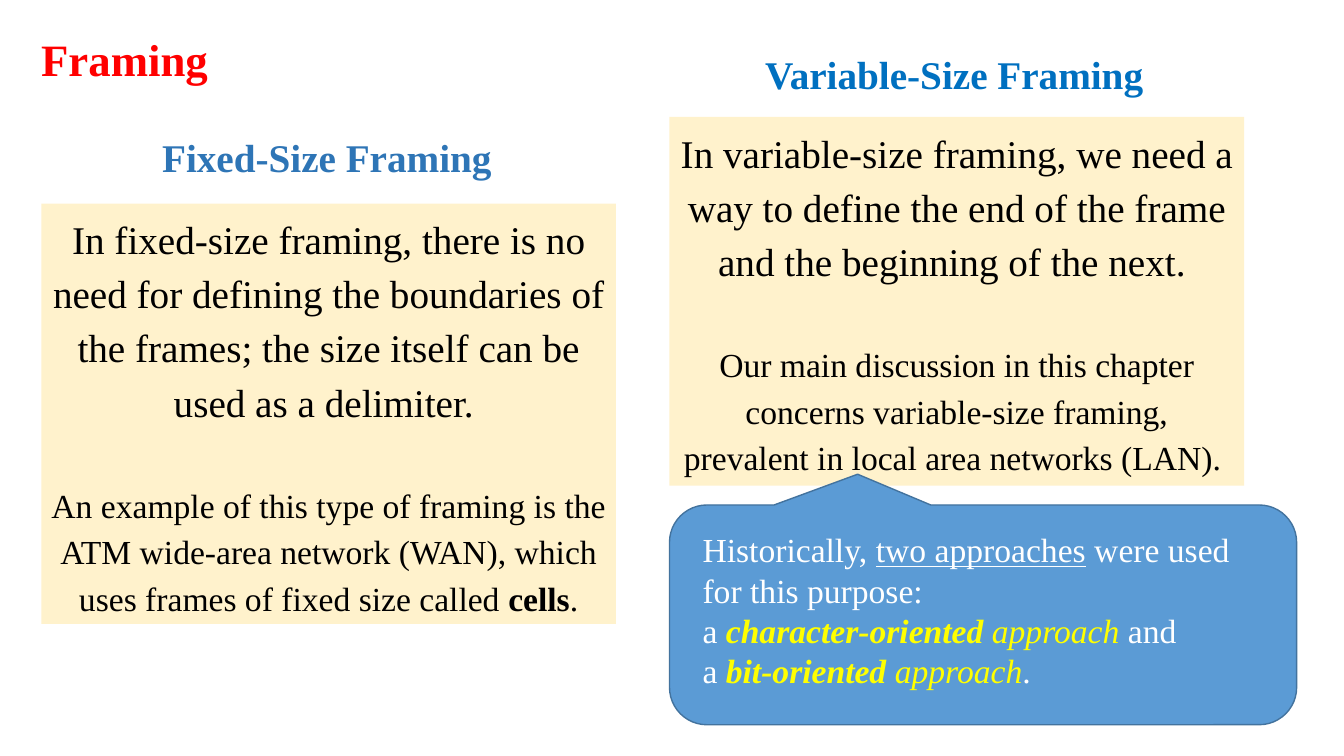
from pptx import Presentation
from pptx.dml.color import RGBColor
from pptx.enum.shapes import MSO_SHAPE as Shape
from pptx.enum.text import MSO_ANCHOR as Anchor, MSO_AUTO_SIZE as AutoSize, PP_ALIGN as Align
from pptx.util import Inches, Pt

FONT = "Times New Roman"
BLACK, WHITE, YELLOW = "000000", "FFFFFF", "FFFF00"
CREAM, CALLOUT_BLUE, CALLOUT_EDGE = "FFF2CC", "5B9BD5", "43739E"
PANEL_WIDTH = 5.7


def rgb(hex_code):
    return RGBColor.from_string(hex_code)


def apply(target, formats):
    for name, value in formats.items():
        setattr(target, name, value)


def write(frame, paragraphs, size, color, wrap=True):
    """Each paragraph is (paragraph formats, [(words, font formats), ...])."""
    apply(frame, {"word_wrap": wrap, "auto_size": AutoSize.SHAPE_TO_FIT_TEXT,
                  "vertical_anchor": Anchor.TOP})
    for index, (layout, runs) in enumerate(paragraphs):
        paragraph = frame.paragraphs[0] if index == 0 else frame.add_paragraph()
        apply(paragraph, {"alignment": Align.LEFT, **layout})
        for words, formats in runs:
            run = paragraph.add_run()
            run.text = words
            style = {"name": FONT, "size": Pt(size), **formats}
            run.font.color.rgb = rgb(style.pop("color", color))
            apply(run.font, style)


def add_text(slide, box, paragraphs, size, color, wrap=True):
    label = slide.shapes.add_textbox(*map(Inches, box))
    write(label.text_frame, paragraphs, size, color, wrap)


def add_heading(slide, box, words, size, color, wrap=False, **layout):
    add_text(slide, box, [(layout, [(words, {"bold": True})])], size, color, wrap)


def add_block(slide, kind, box, fill, line=None):
    block = slide.shapes.add_shape(kind, *map(Inches, box))
    block.shadow.inherit = False
    block.fill.solid()
    block.fill.fore_color.rgb = rgb(fill)
    if line:
        block.line.color.rgb = rgb(line)
        block.line.width = Pt(1)
    else:
        block.line.fill.background()
    return block


def add_panel(slide, left, top, height, statement, remark):
    """Cream panel: a large statement, then a smaller remark after a gap."""
    panel = add_block(slide, Shape.RECTANGLE, (left, top, PANEL_WIDTH, height), CREAM)
    layout = {"alignment": Align.CENTER, "line_spacing": 1.15}
    small_runs = [(words, {"size": Pt(24), **formats}) for words, formats in remark]
    write(panel.text_frame, [
        (layout, [(statement, {})]),
        ({**layout, "space_before": Pt(38.6)}, small_runs),
    ], 28, BLACK)


def add_callout(slide):
    callout = add_block(slide, Shape.ROUNDED_RECTANGULAR_CALLOUT,
                        (6.64, 5.01, 6.22, 2.18), CALLOUT_BLUE, CALLOUT_EDGE)
    for index, value in enumerate((-0.2, -0.64, 0.17)):
        callout.adjustments[index] = value

    accent = {"color": YELLOW, "italic": True}
    intro = [("Historically, ", {}), ("two approaches", {"underline": True}),
             (" were used for this purpose:", {})]
    approaches = [
        [("a ", {}), (kind, {**accent, "bold": True}), (" approach" + gap, accent), (ending, {})]
        for kind, gap, ending in (("character-oriented", " ", "and"), ("bit-oriented", "", "."))
    ]
    add_text(slide, (6.87, 5.2, PANEL_WIDTH, 1.72),
             [({}, runs) for runs in (intro, *approaches)], 24, WHITE)


def main():
    deck = Presentation()
    deck.slide_width, deck.slide_height = Inches(13.33), Inches(7.5)
    slide = deck.slides.add_slide(deck.slide_layouts[6])

    # Slide title
    add_heading(slide, (0.31, 0, 1.9, 0.91), "Framing", 32, "FF0000", wrap=True,
                alignment=Align.JUSTIFY, line_spacing=1.5)

    # Fixed-size column
    add_heading(slide, (1.51, 1.27, 3.51, 0.57), "Fixed-Size Framing", 28, "2E75B6")
    add_panel(slide, 0.41, 2.02, 4.17,
              "In fixed-size framing, there is no need for defining the boundaries of "
              "the frames; the size itself can be used as a delimiter. ",
              [("An example of this type of framing is the ATM wide-area network (WAN), "
                "which uses frames of fixed size called ", {}),
               ("cells", {"bold": True}), (".", {})])

    # Variable-size column
    add_heading(slide, (7.49, 0.45, 3.99, 0.57), "Variable-Size Framing", 28, "0070C0")
    add_panel(slide, 6.64, 1.16, 3.66,
              "In variable-size framing, we need a way to define the end of the frame "
              "and the beginning of the next. ",
              [("Our main discussion in this chapter concerns variable-size framing, "
                "prevalent in local area networks (LAN). ", {})])

    # Callout with the two approaches
    add_callout(slide)

    deck.save("out.pptx")


if __name__ == "__main__":
    main()
